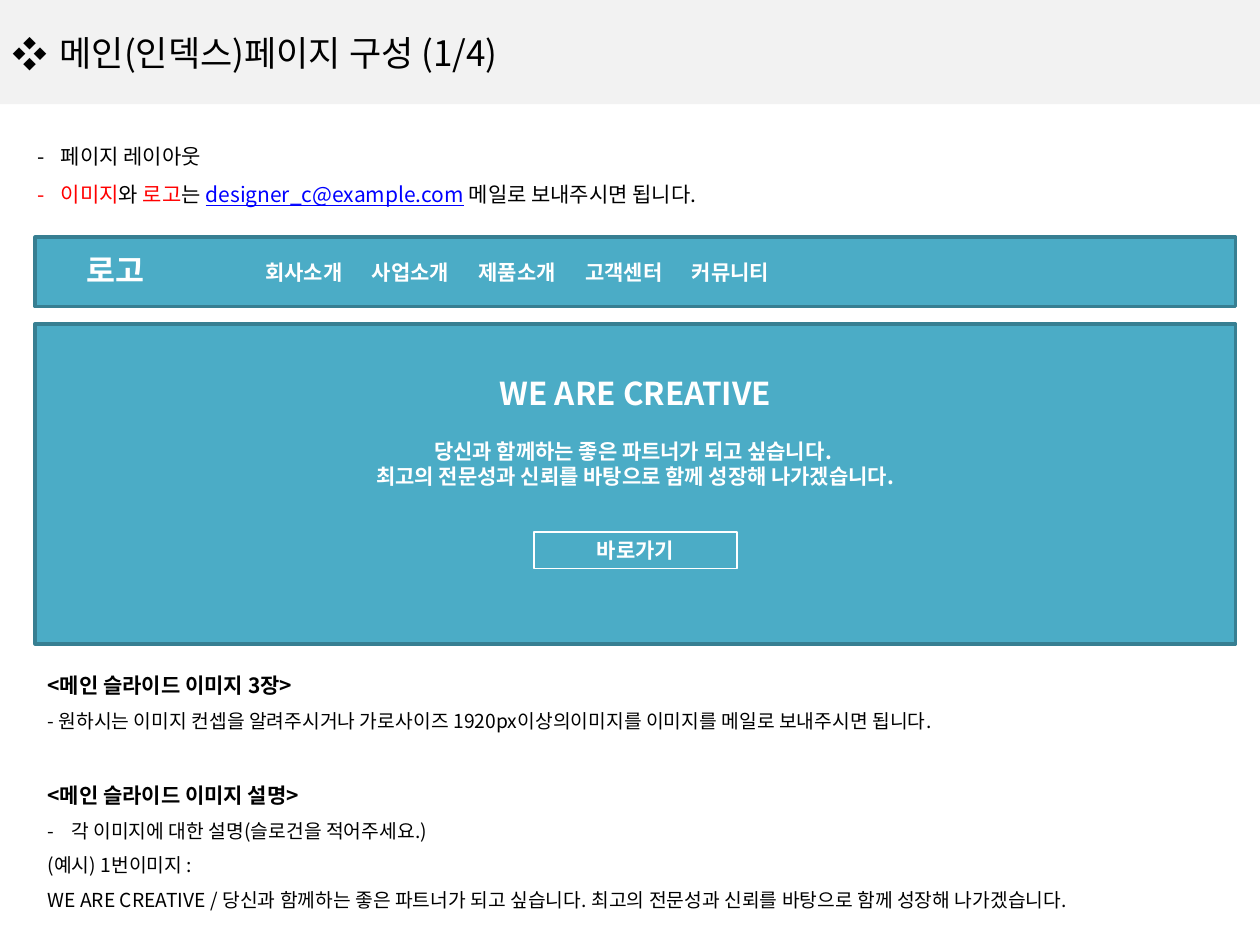
from lxml import etree
from pptx import Presentation
from pptx.dml.color import RGBColor
from pptx.enum.shapes import MSO_SHAPE
from pptx.enum.text import MSO_ANCHOR, PP_ALIGN
from pptx.oxml.ns import qn
from pptx.util import Cm, Pt

RECTANGLE = MSO_SHAPE.RECTANGLE
MIDDLE = MSO_ANCHOR.MIDDLE
LEFT = PP_ALIGN.LEFT
CENTER = PP_ALIGN.CENTER

FONT = "Noto Sans CJK KR"
BLACK = RGBColor(0x00, 0x00, 0x00)
WHITE = RGBColor(0xFF, 0xFF, 0xFF)
RED = RGBColor(0xFF, 0x00, 0x00)
BLUE = RGBColor(0x00, 0x00, 0xFF)
PALE_GRAY = RGBColor(0xF2, 0xF2, 0xF2)
TEAL = RGBColor(0x4B, 0xAC, 0xC6)
DARK_TEAL = RGBColor(0x37, 0x7F, 0x92)

LINE_HEIGHT = 1.2
DASH_INDENT = 0.48
MENU_PITCH = 2.15


def add_rectangle(slide, box, fill=None, line=None, line_width=1):
    """Add a flat rectangle with an optional fill and outline."""
    shape = slide.shapes.add_shape(RECTANGLE, *map(Cm, box))
    shape.shadow.inherit = False
    if fill is None:
        shape.fill.background()
    else:
        shape.fill.solid()
        shape.fill.fore_color.rgb = fill
    if line is None:
        shape.line.fill.background()
    else:
        shape.line.color.rgb = line
        shape.line.width = Pt(line_width)
    return shape


def add_text_frame(slide, box, wrap=True):
    """Add a text box and return its text frame."""
    frame = slide.shapes.add_textbox(*map(Cm, box)).text_frame
    frame.word_wrap = wrap
    return frame


def set_bullet(paragraph, character, indent):
    """Give a paragraph a bullet character with a hanging indent."""
    properties = paragraph._p.get_or_add_pPr()
    properties.set("marL", str(Cm(indent)))
    properties.set("indent", str(-Cm(indent)))
    etree.SubElement(properties, qn("a:buFont"), typeface=FONT)
    etree.SubElement(properties, qn("a:buChar"), char=character)


def set_tab_stops(paragraph, pitch, count):
    """Give a paragraph evenly spaced left tab stops."""
    tabs = etree.SubElement(paragraph._p.get_or_add_pPr(), qn("a:tabLst"))
    for index in range(1, count + 1):
        etree.SubElement(tabs, qn("a:tab"), pos=str(Cm(pitch * index)), algn="l")


def style_paragraph(paragraph, size, color, bold=False, align=LEFT, spacing=1):
    """Set the font, alignment and line pitch of a paragraph."""
    font = paragraph.font
    font.name = FONT
    font.size = Pt(size)
    font.bold = bold
    font.color.rgb = color
    etree.SubElement(paragraph._p.pPr.find(qn("a:defRPr")), qn("a:ea"), typeface=FONT)
    paragraph.alignment = align
    paragraph.line_spacing = Pt(size * LINE_HEIGHT * spacing)


def write_lines(frame, lines, size, color, **style):
    """Write equally styled paragraphs into a text frame."""
    for index, line in enumerate(lines):
        paragraph = frame.add_paragraph() if index else frame.paragraphs[0]
        paragraph.text = line
        style_paragraph(paragraph, size, color, **style)


def add_header(slide, box):
    """Add the title band."""
    frame = add_rectangle(slide, box, PALE_GRAY).text_frame
    frame.vertical_anchor = MIDDLE
    paragraph = frame.paragraphs[0]
    paragraph.text = "메인(인덱스)페이지 구성 (1/4)"
    set_bullet(paragraph, "❖", 0.95)
    style_paragraph(paragraph, 20, BLACK)


def add_introduction(slide, box):
    """Add the layout heading and the mailing instruction."""
    frame = add_text_frame(slide, box)
    heading = frame.paragraphs[0]
    heading.text = "페이지 레이아웃"
    set_bullet(heading, "-", DASH_INDENT)
    style_paragraph(heading, 12, BLACK, spacing=1.5)

    instruction = frame.add_paragraph()
    set_bullet(instruction, "-", DASH_INDENT)
    style_paragraph(instruction, 12, RED, spacing=1.5)
    parts = [
        ("이미지", RED),
        ("와 ", BLACK),
        ("로고", RED),
        ("는 ", BLACK),
        ("designer_c@example.com", BLUE),
        (" 메일로 보내주시면 됩니다.", BLACK),
    ]
    for text, color in parts:
        run = instruction.add_run()
        run.text = text
        run.font.color.rgb = color
        run.font.underline = color == BLUE


def add_navigation(slide, box):
    """Add the navigation bar with its logo text and menu."""
    left, top, _, _ = box
    add_rectangle(slide, box, TEAL, DARK_TEAL, 2)
    logo = add_text_frame(slide, (left + 0.79, top + 0.15, 1.8, 1.02), wrap=False)
    write_lines(logo, ["로고"], 18, WHITE, bold=True)

    items = ["회사소개", "사업소개", "제품소개", "고객센터", "커뮤니티"]
    menu = add_text_frame(slide, (left + 4.39, top + 0.33, 12.2, 0.74))
    paragraph = menu.paragraphs[0]
    paragraph.text = "\t".join(items)
    set_tab_stops(paragraph, MENU_PITCH, len(items) - 1)
    style_paragraph(paragraph, 12, WHITE, bold=True)


def add_hero(slide, box):
    """Add the main banner with its slogan, message and button."""
    left, top, width, _ = box
    add_rectangle(slide, box, TEAL, DARK_TEAL, 2)

    def centered(offset, part_width, height):
        return left + (width - part_width) / 2, top + offset, part_width, height

    style = {"bold": True, "align": CENTER}
    slogan = add_text_frame(slide, centered(0.89, 6.07, 1.02), wrap=False)
    write_lines(slogan, ["WE ARE CREATIVE"], 18, WHITE, **style)
    message = add_text_frame(slide, centered(2.18, 12.2, 1.24))
    write_lines(message, [
        "당신과 함께하는 좋은 파트너가 되고 싶습니다. ",
        "최고의 전문성과 신뢰를 바탕으로 함께 성장해 나가겠습니다.",
    ], 12, WHITE, **style)
    button = add_rectangle(slide, centered(4.19, 4.09, 0.74), line=WHITE)
    write_lines(button.text_frame, ["바로가기"], 12, WHITE, **style)


def add_notes_block(slide, box, heading, lines):
    """Add a bold heading followed by (text, is_bulleted) lines."""
    frame = add_text_frame(slide, box)
    write_lines(frame, [heading], 12, BLACK, bold=True, spacing=1.5)
    for text, is_bulleted in lines:
        paragraph = frame.add_paragraph()
        paragraph.text = text
        if is_bulleted:
            set_bullet(paragraph, "-", DASH_INDENT)
        style_paragraph(paragraph, 11, BLACK, spacing=1.5)


def main():
    """Build the slide and save it."""
    presentation = Presentation()
    presentation.slide_width = Cm(25.4)
    presentation.slide_height = Cm(19.05)
    slide = presentation.slides.add_slide(presentation.slide_layouts[6])
    left, width = 0.71, 24.2

    add_header(slide, (0, 0, 25.4, 2.1))
    add_introduction(slide, (0.5, 2.51, 24.4, 1.78))
    add_navigation(slide, (left, 4.78, width, 1.4))
    add_hero(slide, (left, 6.53, width, 6.45))
    add_notes_block(slide, (left, 13.18, width, 1.7), "<메인 슬라이드 이미지 3장>", [
        ("- 원하시는 이미지 컨셉을 알려주시거나 가로사이즈 1920px이상의이미지를 "
         "이미지를 메일로 보내주시면 됩니다.", False),
    ])
    add_notes_block(slide, (left, 15.39, width, 3.1), "<메인 슬라이드 이미지 설명>", [
        ("각 이미지에 대한 설명(슬로건을 적어주세요.)", True),
        ("(예시) 1번이미지 :", False),
        ("WE ARE CREATIVE / 당신과 함께하는 좋은 파트너가 되고 싶습니다. "
         "최고의 전문성과 신뢰를 바탕으로 함께 성장해 나가겠습니다.", False),
    ])
    presentation.save("out.pptx")


if __name__ == "__main__":
    main()
